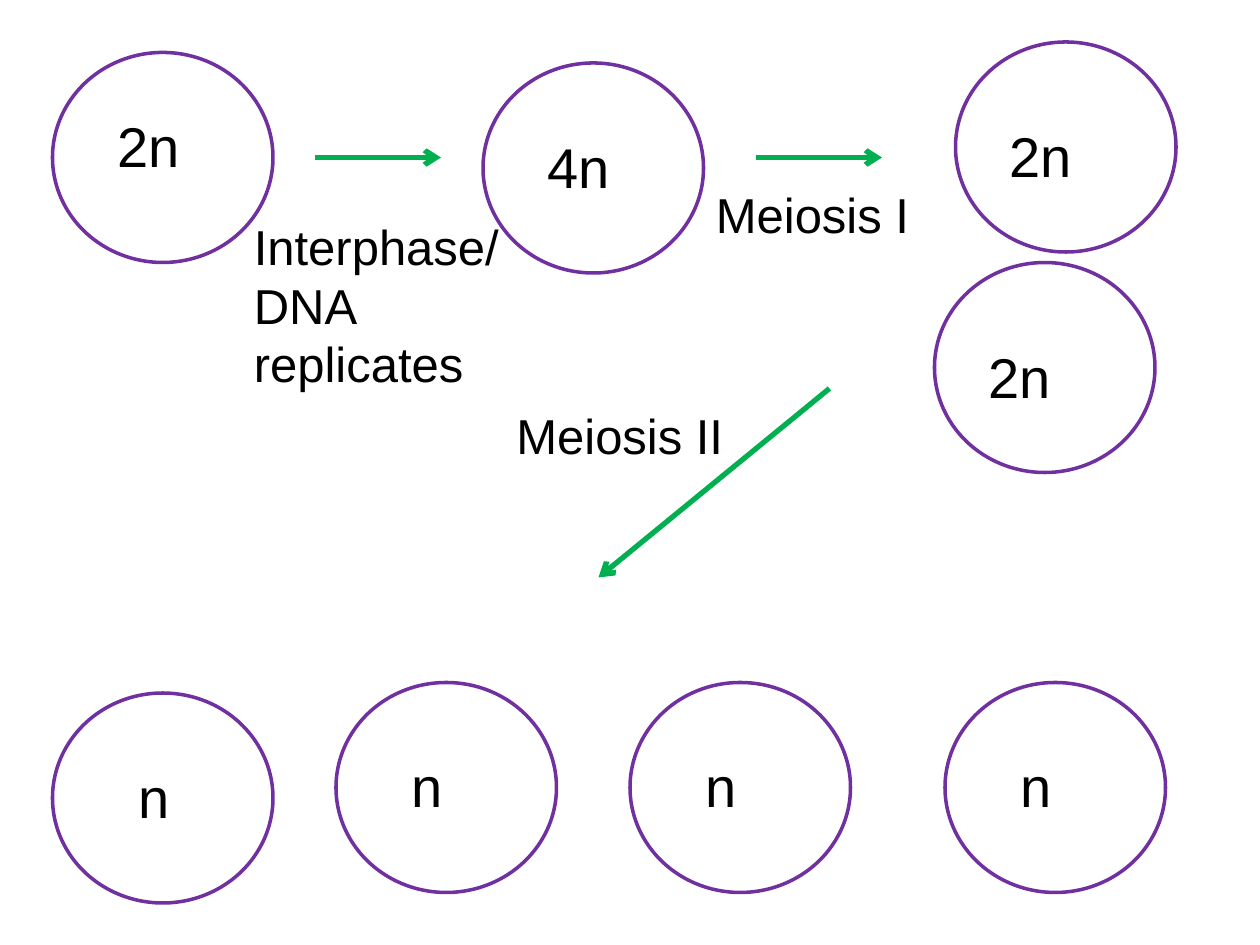
"""Build a slide that follows ploidy from interphase through meiosis I and II."""
from lxml.etree import SubElement
from pptx import Presentation
from pptx.dml.color import RGBColor
from pptx.enum.shapes import MSO_CONNECTOR, MSO_SHAPE
from pptx.enum.text import MSO_AUTO_SIZE
from pptx.oxml.ns import qn
from pptx.util import Pt

SCALE = 7620
COLORS = {"cell": "7030A0", "arrow": "00B050", "text": "000000"}
CELL_WIDTH, CELL_HEIGHT = 210, 200


def px(*lengths):
    return [length * SCALE for length in lengths]


def add_text(page, text, left, top, width, height, size=32, font="Arial", color="text"):
    box = page.shapes.add_textbox(*px(left, top, width, height))
    frame = box.text_frame
    frame.word_wrap = True
    frame.auto_size = MSO_AUTO_SIZE.SHAPE_TO_FIT_TEXT
    span = frame.paragraphs[0].add_run()
    span.text = text
    span.font.size = Pt(size)
    span.font.name = font
    span.font.color.rgb = RGBColor.from_string(COLORS[color])


deck = Presentation()
deck.slide_width, deck.slide_height = px(1200, 900)
page = deck.slides.add_slide(deck.slide_layouts[6])

cells = [
    (50, 50, "2n", 100, 100, 110),
    (460, 60, "4n", 510, 120, 110),
    (890, 250, "2n", 930, 320, 110),
    (910, 40, "2n", 950, 110, 110),
    (50, 660, "n", 120, 720, 70),
    (320, 650, "n", 380, 710, 90),
    (600, 650, "n", 660, 710, 90),
    (900, 650, "n", 960, 710, 80),
]
for left, top, ploidy, label_left, label_top, label_width in cells:
    cell = page.shapes.add_shape(MSO_SHAPE.OVAL, *px(left, top, CELL_WIDTH, CELL_HEIGHT))
    cell.shadow.inherit = False
    cell.fill.background()
    cell.line.color.rgb = RGBColor.from_string(COLORS["cell"])
    cell.line.width = Pt(2)
    add_text(page, ploidy, label_left, label_top, label_width, 77)

arrows = [(300, 150, 420, 150), (720, 150, 840, 150), (790, 370, 570, 550)]
for ends in arrows:
    arrow = page.shapes.add_connector(MSO_CONNECTOR.STRAIGHT, *px(*ends))
    arrow.line.color.rgb = RGBColor.from_string(COLORS["arrow"])
    arrow.line.width = Pt(3)
    properties = arrow.element.spPr
    SubElement(properties.find(qn("a:ln")), qn("a:tailEnd"), type="arrow")
    SubElement(properties, qn("a:effectLst"))

captions = [
    ("Interphase/ DNA replicates", 230, 200, 181),
    ("Meiosis I", 670, 170, 68),
    ("Meiosis II", 480, 380, 68),
]
for caption, left, top, height in captions:
    add_text(page, caption, left, top, 270, height, size=28)

deck.save("out.pptx")
